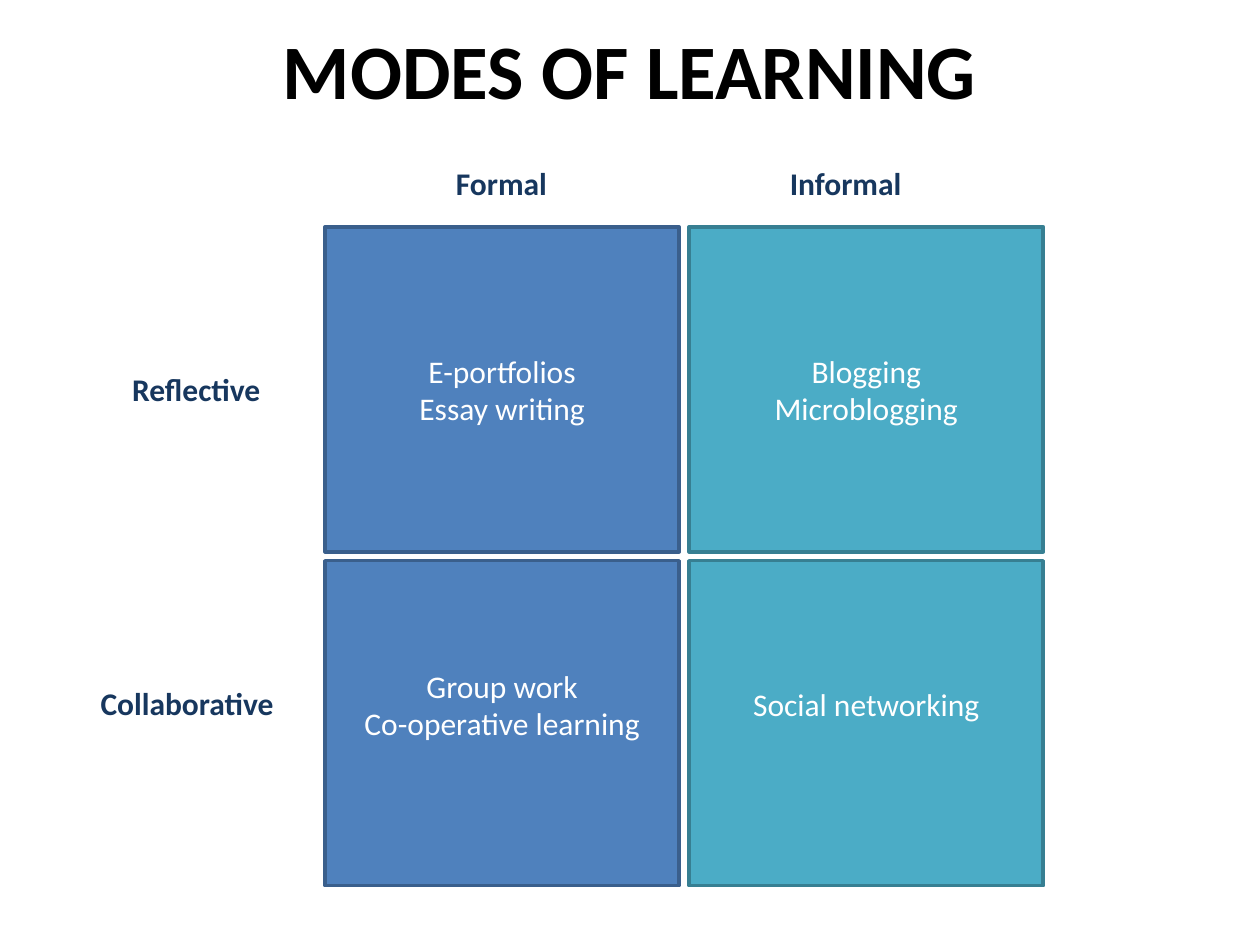
from dataclasses import dataclass

from pptx import Presentation
from pptx.dml.color import RGBColor
from pptx.enum import shapes, text
from pptx.util import Inches, Pt


@dataclass(frozen=True)
class Theme:
    font: str = "Calibri"
    title_size: int = 44
    body_size: int = 18
    title: str = "000000"
    label: str = "17375E"
    cell_text: str = "FFFFFF"
    formal: tuple[str, str] = ("4F81BD", "3A5F8C")
    informal: tuple[str, str] = ("4BACC6", "377F92")


@dataclass(frozen=True)
class Label:
    text: str
    left: float
    top: float
    width: float


@dataclass(frozen=True)
class Cell:
    text: str
    row: int
    col: int
    raise_by: float = 0


THEME = Theme()
GRID_LEFT, GRID_TOP = 2.58, 1.8
CELL_W, CELL_H = 2.81, 2.58
COL_STEP, ROW_STEP = 2.89, 2.65
LABEL_H = 0.4
INSET = 0.05

LABELS = [
    Label("Informal", 6.17, 1.25, 1.2),
    Label("Formal", 3.52, 1.25, 1.11),
    Label("Collaborative", 0.7, 5.38, 1.8),
    Label("Reflective", 0.95, 2.89, 1.39),
]
CELLS = [
    Cell("E-portfolios\nEssay writing", 0, 0),
    Cell("Group work\nCo-operative learning", 1, 0, raise_by=0.15),
    Cell("Social networking", 1, 1, raise_by=0.15),
    Cell("Blogging\nMicroblogging", 0, 1),
]


def format_text(tf, size: int, color: str, bold: bool, align) -> None:
    for p in tf.paragraphs:
        p.alignment = align
        for r in p.runs:
            r.font.name = THEME.font
            r.font.size = Pt(size)
            r.font.bold = bold
            r.font.color.rgb = RGBColor.from_string(color)


def set_title(s, title: str) -> None:
    sp = s.shapes.title
    sp.left, sp.top = Inches(0.5), Inches(-0.08)
    sp.width, sp.height = Inches(9), Inches(1.25)
    tf = sp.text_frame
    tf.text = title
    tf.vertical_anchor = text.MSO_ANCHOR.MIDDLE
    format_text(tf, THEME.title_size, THEME.title, True, text.PP_ALIGN.CENTER)


def add_label(s, label: Label) -> None:
    sp = s.shapes.add_textbox(Inches(label.left), Inches(label.top),
                              Inches(label.width), Inches(LABEL_H))
    tf = sp.text_frame
    tf.word_wrap = False
    tf.auto_size = text.MSO_AUTO_SIZE.SHAPE_TO_FIT_TEXT
    tf.text = label.text
    format_text(tf, THEME.body_size, THEME.label, True, text.PP_ALIGN.LEFT)


def add_cell(s, cell: Cell) -> None:
    """Draw one quadrant; raise_by lifts its text above the middle."""
    sp = s.shapes.add_shape(
        shapes.MSO_SHAPE.RECTANGLE,
        Inches(GRID_LEFT + cell.col * COL_STEP),
        Inches(GRID_TOP + cell.row * ROW_STEP),
        Inches(CELL_W), Inches(CELL_H))
    fill, line = (THEME.formal, THEME.informal)[cell.col]
    sp.shadow.inherit = False
    sp.fill.solid()
    sp.fill.fore_color.rgb = RGBColor.from_string(fill)
    sp.line.color.rgb = RGBColor.from_string(line)
    sp.line.width = Pt(2)
    tf = sp.text_frame
    tf.word_wrap = True
    tf.vertical_anchor = text.MSO_ANCHOR.MIDDLE
    tf.margin_bottom = Inches(INSET + 2 * cell.raise_by)
    tf.text = cell.text
    format_text(tf, THEME.body_size, THEME.cell_text, False, text.PP_ALIGN.CENTER)


def main() -> None:
    prs = Presentation()
    prs.slide_width, prs.slide_height = Inches(10), Inches(7.5)
    s = prs.slides.add_slide(prs.slide_layouts[5])
    set_title(s, "MODES OF LEARNING")
    for label in LABELS:
        add_label(s, label)
    for cell in CELLS:
        add_cell(s, cell)
    prs.save("out.pptx")


if __name__ == "__main__":
    main()
